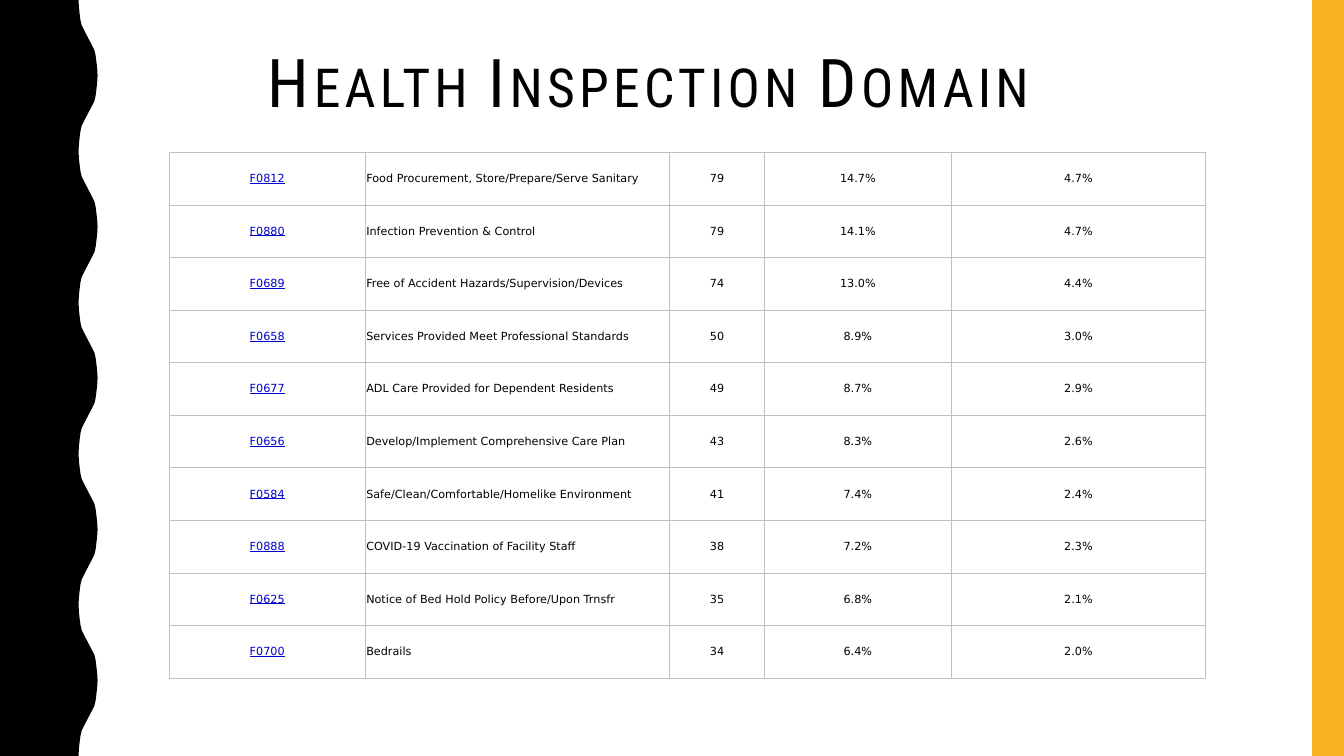
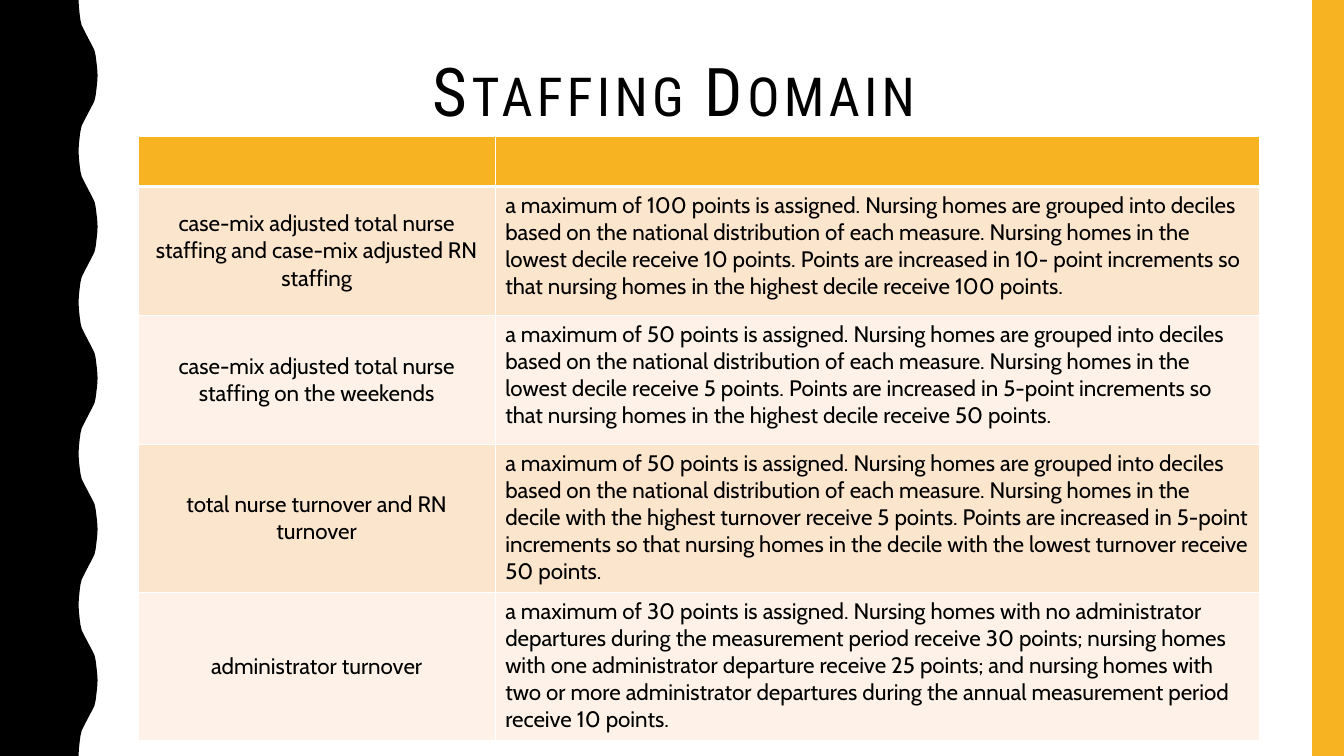
from lxml import etree
from pptx import Presentation
from pptx.dml.color import RGBColor
from pptx.enum.shapes import MSO_SHAPE
from pptx.enum.text import MSO_ANCHOR, PP_ALIGN
from pptx.oxml.ns import qn
from pptx.util import Cm, Pt

RECT = MSO_SHAPE.RECTANGLE
MIDDLE, TOP = MSO_ANCHOR.MIDDLE, MSO_ANCHOR.TOP
LEFT, CENTER = PP_ALIGN.LEFT, PP_ALIGN.CENTER

BLACK = RGBColor(0x00, 0x00, 0x00)
WHITE = RGBColor(0xFF, 0xFF, 0xFF)
GOLD = RGBColor(0xF8, 0xB3, 0x23)
PEACH = RGBColor(0xFC, 0xE5, 0xCD)
CREAM = RGBColor(0xFE, 0xF2, 0xE8)
GRAY = RGBColor(0xC0, 0xC0, 0xC0)
LINK_BLUE = RGBColor(0x00, 0x00, 0xCC)

TITLE_FONT, BODY_FONT, CODE_FONT = "Roboto Condensed", "Cabin", "DejaVu Sans"
SLIDE_W, SLIDE_H = Cm(33.87), Cm(19.05)
BAR_W = Cm(0.8)

WAVE_LEFT, WAVE_DEPTH, WAVE_HALF, WAVE_COUNT = 1.98, 0.48, 1.905, 5
WAVE_QUARTER = [(0, 0), (0.01, 0.18), (0.03, 0.36), (0.05, 0.51),
                (0.08, 0.64), (0.13, 0.74), (0.18, 0.84), (0.24, 0.95)]

CITATIONS = [
    ("F0812", "Food Procurement, Store/Prepare/Serve Sanitary", "79", "14.7%", "4.7%"),
    ("F0880", "Infection Prevention & Control", "79", "14.1%", "4.7%"),
    ("F0689", "Free of Accident Hazards/Supervision/Devices", "74", "13.0%", "4.4%"),
    ("F0658", "Services Provided Meet Professional Standards", "50", "8.9%", "3.0%"),
    ("F0677", "ADL Care Provided for Dependent Residents", "49", "8.7%", "2.9%"),
    ("F0656", "Develop/Implement Comprehensive Care Plan", "43", "8.3%", "2.6%"),
    ("F0584", "Safe/Clean/Comfortable/Homelike Environment", "41", "7.4%", "2.4%"),
    ("F0888", "COVID-19 Vaccination of Facility Staff", "38", "7.2%", "2.3%"),
    ("F0625", "Notice of Bed Hold Policy Before/Upon Trnsfr", "35", "6.8%", "2.1%"),
    ("F0700", "Bedrails", "34", "6.4%", "2.0%"),
]

STAFFING = [
    ("case-mix adjusted total nurse staffing and case-mix adjusted RN staffing",
     "a maximum of 100 points is assigned. Nursing homes are grouped into deciles based on "
     "the national distribution of each measure. Nursing homes in the lowest decile receive "
     "10 points. Points are increased in 10- point increments so that nursing homes in the "
     "highest decile receive 100 points."),
    ("case-mix adjusted total nurse staffing on the weekends",
     "a maximum of 50 points is assigned. Nursing homes are grouped into deciles based on "
     "the national distribution of each measure. Nursing homes in the lowest decile receive "
     "5 points. Points are increased in 5-point increments so that nursing homes in the "
     "highest decile receive 50 points."),
    ("total nurse turnover and RN turnover",
     "a maximum of 50 points is assigned. Nursing homes are grouped into deciles based on "
     "the national distribution of each measure. Nursing homes in the decile with the highest "
     "turnover receive 5 points. Points are increased in 5-point increments so that nursing "
     "homes in the decile with the lowest turnover receive 50 points."),
    ("administrator turnover",
     "a maximum of 30 points is assigned. Nursing homes with no administrator departures "
     "during the measurement period receive 30 points; nursing homes with one administrator "
     "departure receive 25 points; and nursing homes with two or more administrator "
     "departures during the annual measurement period receive 10 points."),
]


def write(tf, text, font=BODY_FONT, size=16, color=BLACK, align=LEFT, underline=False,
          line_spacing=None, small_caps=False, tracking=None):
    """Write one formatted paragraph into a text frame."""
    p = tf.paragraphs[0]
    p.alignment = align
    p.line_spacing = line_spacing
    r = p.add_run()
    r.text = text
    r.font.name, r.font.size = font, Pt(size)
    r.font.color.rgb = color
    if underline:
        r.font.underline = True
    rpr = r.font._element
    if small_caps:
        rpr.set("cap", "small")
    if tracking:
        rpr.set("spc", str(tracking * 100))


def paint(shape, color):
    """Give a shape a plain fill with no line or shadow."""
    shape.shadow.inherit = False
    shape.fill.solid()
    shape.fill.fore_color.rgb = color
    shape.line.fill.background()


def add_wave(s):
    """Draw the black band with a wavy right edge."""
    crest = [(WAVE_DEPTH - x, WAVE_HALF - y) for x, y in reversed(WAVE_QUARTER)]
    rise = WAVE_QUARTER + crest
    fall = [(x, 2 * WAVE_HALF - y) for x, y in reversed(rise)]
    edge = [(Cm(WAVE_LEFT + x), Cm(2 * WAVE_HALF * i + y))
            for i in range(WAVE_COUNT) for x, y in rise + fall]
    builder = s.shapes.build_freeform(0, 0)
    builder.add_line_segments(edge + [(0, SLIDE_H)], close=True)
    paint(builder.convert_to_shape(), BLACK)


def add_base(prs, title, box):
    """Add a slide with its side bands and title."""
    s = prs.slides.add_slide(prs.slide_layouts[6])
    add_wave(s)
    paint(s.shapes.add_shape(RECT, SLIDE_W - BAR_W, 0, BAR_W, SLIDE_H), GOLD)
    tf = s.shapes.add_textbox(*box).text_frame
    tf.word_wrap = True
    tf.vertical_anchor = MIDDLE
    write(tf, title, font=TITLE_FONT, size=48, align=CENTER, line_spacing=0.9,
          small_caps=True, tracking=3)
    return s


def add_grid(s, left, top, widths, heights):
    """Add a table with the given column widths and row heights."""
    table = s.shapes.add_table(len(heights), len(widths), left, top,
                               sum(widths), sum(heights)).table
    table.first_row = table.horz_banding = False
    for column, width in zip(table.columns, widths):
        column.width = width
    for row, height in zip(table.rows, heights):
        row.height = height
    return table


def style_cell(cell, fill, border, width, top=None, bottom=None, anchor=MIDDLE, inset=None):
    """Set the borders, fill, anchor and margins of a cell."""
    tcpr = cell._tc.get_or_add_tcPr()
    edges = {"a:lnL": width, "a:lnR": width, "a:lnT": top or width, "a:lnB": bottom or width}
    for tag, points in edges.items():
        ln = etree.SubElement(tcpr, qn(tag), w=str(Pt(points)))
        solid = etree.SubElement(ln, qn("a:solidFill"))
        etree.SubElement(solid, qn("a:srgbClr"), val=str(border))
    cell.fill.solid()
    cell.fill.fore_color.rgb = fill
    cell.vertical_anchor = anchor
    if inset is not None:
        cell.margin_left = cell.margin_right = cell.margin_top = cell.margin_bottom = inset


def add_citation_table(s, left, top, height):
    """Place the table of citations."""
    widths = [Cm(w) for w in (4.93, 7.67, 2.4, 4.7, 6.42)]
    table = add_grid(s, left, top, widths, [height // len(CITATIONS)] * len(CITATIONS))
    for i, record in enumerate(CITATIONS):
        for j, text in enumerate(record):
            cell = table.cell(i, j)
            style_cell(cell, WHITE, GRAY, 0.75, inset=Cm(0.03))
            write(cell.text_frame, text, font=CODE_FONT, size=8,
                  color=LINK_BLUE if j == 0 else BLACK, underline=j == 0,
                  align=LEFT if j == 1 else CENTER)


def add_staffing_table(s, left, top):
    """Place the staffing table with its empty header and banded rows."""
    widths = [Cm(9), Cm(19.27)]
    table = add_grid(s, left, top, widths, [Cm(h) for h in (1.27, 3.25, 3.25, 3.73, 3.73)])
    for j in range(len(widths)):
        style_cell(table.cell(0, j), GOLD, WHITE, 1, bottom=3)
    for i, record in enumerate(STAFFING, 1):
        for j, text in enumerate(record):
            cell = table.cell(i, j)
            style_cell(cell, PEACH if i % 2 else CREAM, WHITE, 1, top=3 if i == 1 else None,
                       anchor=TOP if j else MIDDLE)
            write(cell.text_frame, text, align=LEFT if j else CENTER)


def main():
    """Build and save the presentation."""
    prs = Presentation()
    prs.slide_width, prs.slide_height = SLIDE_W, SLIDE_H
    s = add_base(prs, "Health Inspection Domain", (Cm(3.48), Cm(0.48), Cm(28.27), Cm(3.35)))
    add_citation_table(s, Cm(4.27), Cm(3.84), Cm(13.25))
    s = add_base(prs, "Staffing Domain", (Cm(3.81), Cm(0.38), Cm(27.94), Cm(4.04)))
    add_staffing_table(s, Cm(3.48), Cm(3.43))
    prs.save("out.pptx")


if __name__ == "__main__":
    main()
